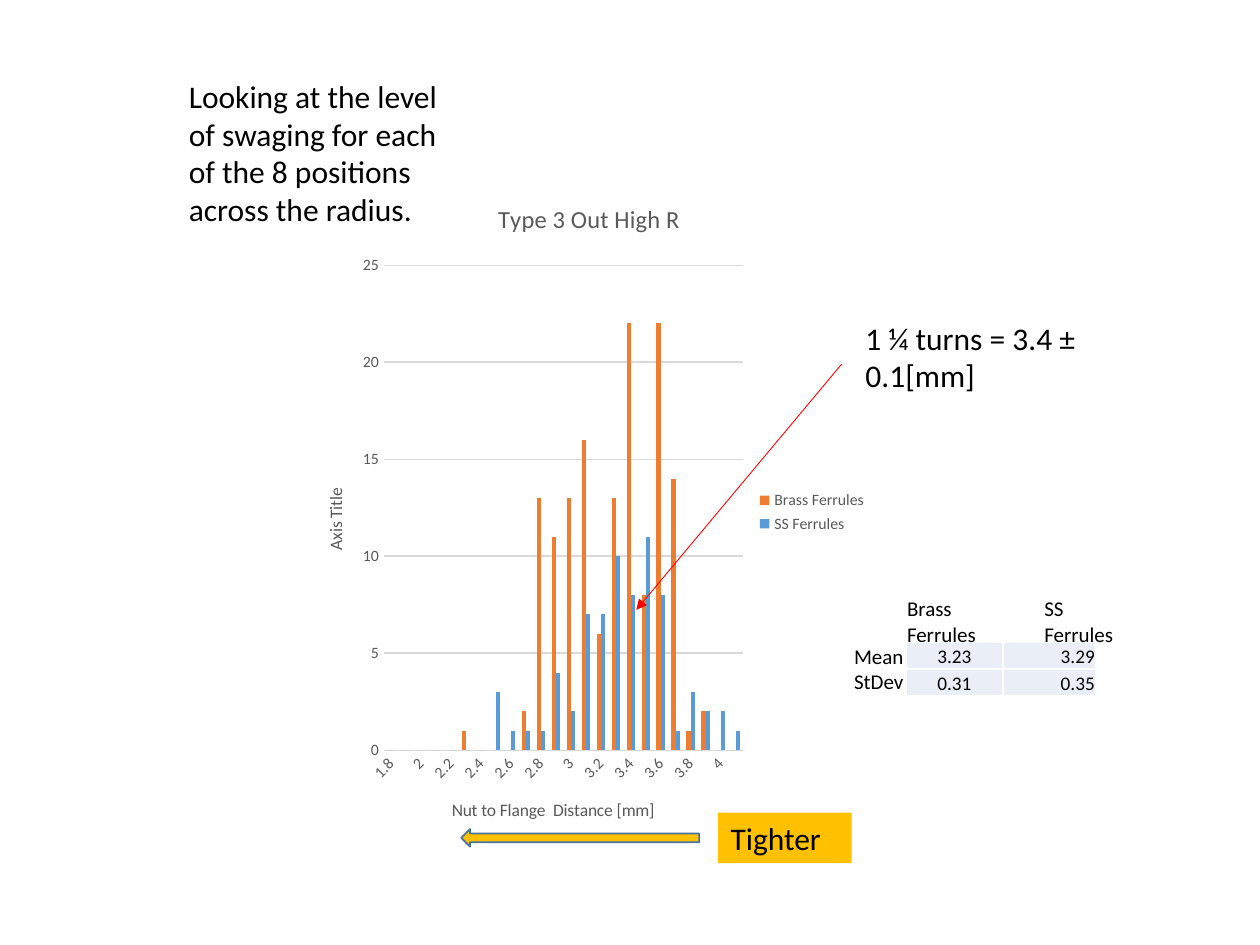
from dataclasses import dataclass

from lxml import etree
from pptx import Presentation
from pptx.chart.data import CategoryChartData
from pptx.dml.color import RGBColor
from pptx.enum.chart import XL_CHART_TYPE, XL_LEGEND_POSITION, XL_TICK_MARK
from pptx.enum.shapes import MSO_CONNECTOR, MSO_SHAPE
from pptx.enum.text import MSO_ANCHOR, PP_ALIGN
from pptx.oxml.ns import qn
from pptx.util import Inches, Pt

COLUMN = XL_CHART_TYPE.COLUMN_CLUSTERED
LEGEND_RIGHT = XL_LEGEND_POSITION.RIGHT
NO_TICK = XL_TICK_MARK.NONE
STRAIGHT = MSO_CONNECTOR.STRAIGHT
LEFT_ARROW = MSO_SHAPE.LEFT_ARROW
BOTTOM = MSO_ANCHOR.BOTTOM
CENTER, RIGHT = PP_ALIGN.CENTER, PP_ALIGN.RIGHT

COLUMNS, ROWS = 100, 75
BLANK_LAYOUT = 6


@dataclass(frozen=True)
class Theme:
    font: str = "Calibri"
    text: str = "000000"
    muted: str = "595959"
    grid: str = "D9D9D9"
    brass: str = "ED7D31"
    steel: str = "5B9BD5"
    accent: str = "FFC000"
    accent_line: str = "43739E"
    pointer: str = "FF0000"
    cell: str = "EAEFF7"
    cell_border: str = "FFFFFF"
    note_size: float = 18
    label_size: float = 12
    cell_size: float = 11
    chart_title_size: float = 14
    axis_title_size: float = 10
    tick_size: float = 9


class SlideBuilder:
    """Places elements on one slide; boxes are (column, row, columns, rows)."""

    def __init__(self, prs, theme):
        self.theme = theme
        self.cell_w = prs.slide_width / COLUMNS
        self.cell_h = prs.slide_height / ROWS
        self.s = prs.slides.add_slide(prs.slide_layouts[BLANK_LAYOUT])

    def x(self, columns):
        return round(columns * self.cell_w)

    def y(self, rows):
        return round(rows * self.cell_h)

    def box(self, left, top, width, height):
        return self.x(left), self.y(top), self.x(width), self.y(height)

    def style(self, font, size, color):
        font.name, font.size, font.bold = self.theme.font, Pt(size), False
        font.color.rgb = RGBColor.from_string(color)

    def paint(self, fill, color):
        fill.solid()
        fill.fore_color.rgb = RGBColor.from_string(color)

    def stroke(self, line, color, width):
        self.paint(line.fill, color)
        line.width = Pt(width)

    def text(self, box, lines, size, fill=None):
        sp = self.s.shapes.add_textbox(*self.box(*box))
        if fill:
            self.paint(sp.fill, fill)
        tf = sp.text_frame
        tf.word_wrap = True
        tf.text = "\n".join(lines)
        for p in tf.paragraphs:
            self.style(p.font, size, self.theme.text)

    def block_arrow(self, box):
        sp = self.s.shapes.add_shape(LEFT_ARROW, *self.box(*box))
        sp.shadow.inherit = False
        self.paint(sp.fill, self.theme.accent)
        self.stroke(sp.line, self.theme.accent_line, 1)

    def pointer(self, start, end):
        ends = [f(v) for pt in (start, end) for f, v in zip((self.x, self.y), pt)]
        line = self.s.shapes.add_connector(STRAIGHT, *ends)
        self.stroke(line.line, self.theme.pointer, 0.5)
        etree.SubElement(line.line._get_or_add_ln(), qn("a:tailEnd"), type="triangle")
        etree.SubElement(line._element.spPr, qn("a:effectLst"))

    def cell_borders(self, cell):
        tc_pr = cell._tc.get_or_add_tcPr()
        for side in ("a:lnL", "a:lnR", "a:lnT", "a:lnB"):
            ln = etree.SubElement(tc_pr, qn(side), w=str(Pt(1)))
            fill = etree.SubElement(ln, qn("a:solidFill"))
            etree.SubElement(fill, qn("a:srgbClr"), val=self.theme.cell_border)

    def table(self, left, top, widths, row_height, rows, aligns):
        box = self.box(left, top, sum(widths), row_height * len(rows))
        table = self.s.shapes.add_table(len(rows), len(widths), *box).table
        table.first_row = table.horz_banding = False
        for column, width in zip(table.columns, widths):
            column.width = self.x(width)
        for row, values in zip(table.rows, rows):
            row.height = self.y(row_height)
            for cell, value, align in zip(row.cells, values, aligns):
                self.cell_borders(cell)
                self.paint(cell.fill, self.theme.cell)
                cell.margin_left = cell.margin_right = cell.margin_top = Inches(0.01)
                cell.margin_bottom = 0
                cell.vertical_anchor = BOTTOM
                cell.text = value
                p = cell.text_frame.paragraphs[0]
                p.alignment = align
                self.style(p.font, self.theme.cell_size, self.theme.text)

    def titled(self, owner, title, size):
        """Gives a chart or an axis its title."""
        tf = (owner.chart_title if hasattr(owner, "chart_title") else owner.axis_title).text_frame
        tf.text = title
        self.style(tf.paragraphs[0].font, size, self.theme.muted)

    def axis(self, axis, title):
        th = self.theme
        self.titled(axis, title, th.axis_title_size)
        axis.major_tick_mark = axis.minor_tick_mark = NO_TICK
        self.style(axis.tick_labels.font, th.tick_size, th.muted)

    def column_chart(self, box, title, axis_titles, categories, series):
        """Draws clustered columns; series holds (name, color, values)."""
        th = self.theme
        data = CategoryChartData(number_format="0")
        data.categories = categories
        for name, _, values in series:
            data.add_series(name, values)
        chart = self.s.shapes.add_chart(COLUMN, *self.box(*box), data).chart
        self.style(chart.font, th.axis_title_size, th.text)
        self.titled(chart, title, th.chart_title_size)

        cat, val = chart.category_axis, chart.value_axis
        self.axis(cat, axis_titles[0])
        self.axis(val, axis_titles[1])
        cat.tick_labels.number_format = "0.00"
        cat.tick_labels.number_format_is_linked = False
        cat._element.txPr.find(qn("a:bodyPr")).set("rot", str(-45 * 60000))
        self.stroke(cat.format.line, th.grid, 0.75)
        val.maximum_scale, val.minimum_scale, val.major_unit = 25, 0, 5
        val.format.line.fill.background()
        self.stroke(val.major_gridlines.format.line, th.grid, 0.75)

        chart.has_legend = True
        chart.legend.position = LEGEND_RIGHT
        chart.legend.include_in_layout = False
        self.style(chart.legend.font, th.tick_size, th.muted)
        plot = chart.plots[0]
        plot.gap_width, plot.overlap, plot.vary_by_categories = 150, 0, False
        for bars, (_, color, _) in zip(plot.series, series):
            self.paint(bars.format.fill, color)


def main():
    prs = Presentation()
    prs.slide_width, prs.slide_height = Inches(10), Inches(7.5)
    th = Theme()
    b = SlideBuilder(prs, th)

    distances = [round(1.8 + 0.1 * i, 1) for i in range(24)]
    brass = [0, 0, 0, 0, 0, 1, 0, 0, 0, 2, 13, 11,
             13, 16, 6, 13, 22, 8, 22, 14, 1, 2, 0, 0]
    steel = [0, 0, 0, 0, 0, 0, 0, 3, 1, 1, 1, 4,
             2, 7, 7, 10, 8, 11, 8, 1, 3, 2, 2, 1]
    b.column_chart((23.7, 14.1, 46.1, 53.1), "Type 3 Out High R",
                   ("Nut to Flange  Distance [mm]", "Axis Title"), distances,
                   [("Brass Ferrules", th.brass, brass), ("SS Ferrules", th.steel, steel)])

    b.text((14, 5.6, 23.5, 13.1),
           ["Looking at the level of swaging for each of the 8 positions across the radius."],
           th.note_size)

    b.table(71.9, 51, (7.7, 7.4), 2.1,
            [("3.23", "3.29"), ("0.31", "0.35")], (CENTER, RIGHT))
    b.text((71, 46.8, 10.5, 5), ["Brass Ferrules"], th.label_size)
    b.text((81.9, 46.8, 8.6, 5), ["SS Ferrules"], th.label_size)
    b.text((66.8, 50.6, 6.1, 5), ["Mean", "StDev"], th.label_size)

    b.block_arrow((36.6, 65.8, 18.9, 1.4))
    b.text((57, 64.5, 10.6, 4), ["Tighter"], th.note_size, th.accent)
    b.text((67.7, 24.8, 23.8, 7.1), ["1 ¼ turns = 3.4 ± 0.1[mm]"], th.note_size)
    b.pointer((66.8, 28.9), (50.5, 48.4))

    prs.save("out.pptx")


if __name__ == "__main__":
    main()
